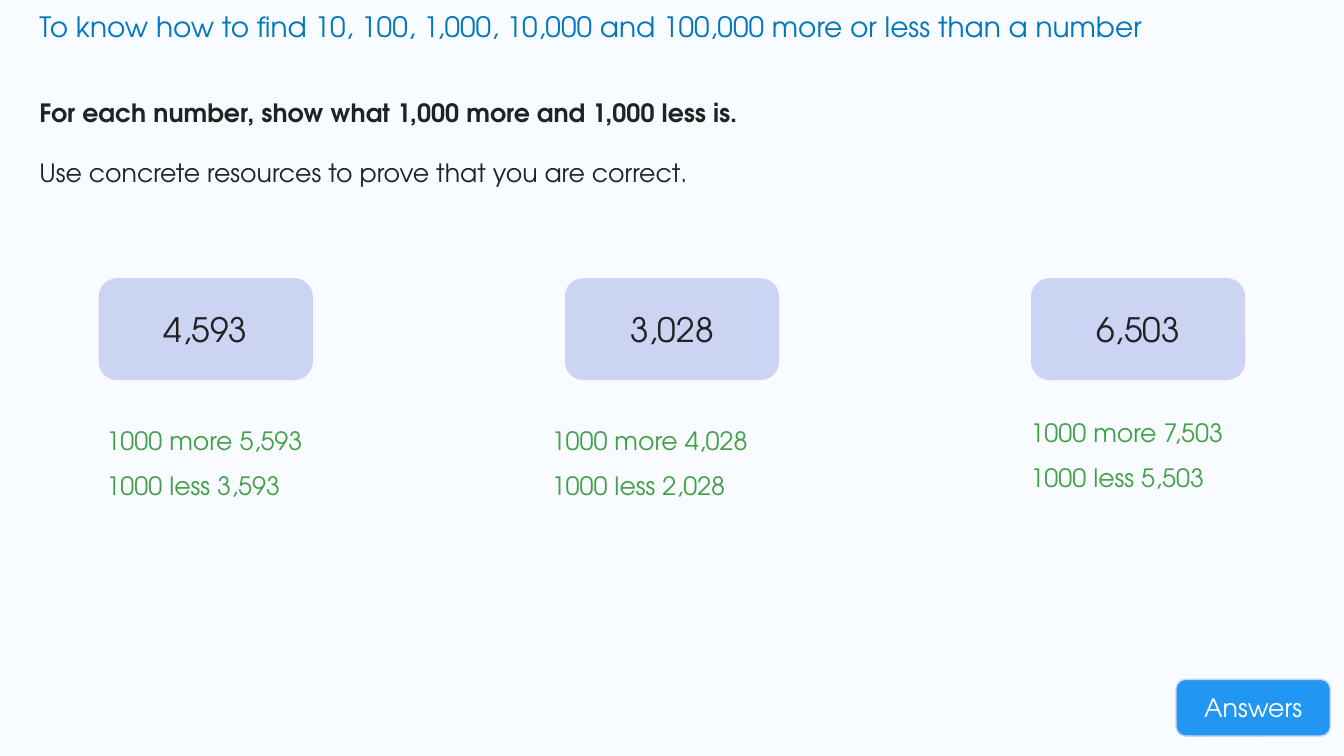
from dataclasses import dataclass

from pptx import Presentation
from pptx.dml.color import RGBColor
from pptx.enum.shapes import MSO_SHAPE
from pptx.enum.text import MSO_ANCHOR, PP_ALIGN
from pptx.util import Pt

EMU_PER_PX = 9525
SLIDE_W, SLIDE_H = 1280, 720


@dataclass(frozen=True)
class Theme:
    font: str = "TeX Gyre Adventor"
    background: str = "F8FBFF"
    heading: str = "0277BD"
    ink: str = "222222"
    card: str = "CCD4F4"
    answer: str = "43A047"
    button: str = "2196F3"
    button_text: str = "FFFFFF"
    heading_size: int = 20
    body_size: int = 18
    number_size: int = 24


THEME = Theme()

CARD_W, CARD_H, CARD_TOP, CARD_STEP = 200, 93, 267, 444
ANSWER_W, ANSWER_H = 248, 83

# number, left and top of its answers
QUESTIONS = [
    (4593, 92, 386),
    (3028, 516, 386),
    (6503, 972, 378),
]


def px(*lengths):
    return [length * EMU_PER_PX for length in lengths]


def paint(fill, color):
    fill.solid()
    fill.fore_color.rgb = RGBColor.from_string(color)


def style(paragraph, size, color, bold=False):
    font = paragraph.font
    font.name = THEME.font
    font.size = Pt(size)
    font.bold = bold
    font.color.rgb = RGBColor.from_string(color)


def add_lines(slide, box, lines, size, color, spacing=1.0):
    """Add a left-aligned text box with one paragraph per line."""
    frame = slide.shapes.add_textbox(*px(*box)).text_frame
    frame.word_wrap = True
    frame.text = "\n".join(lines)
    for paragraph in frame.paragraphs:
        style(paragraph, size, color)
        paragraph.line_spacing = spacing
    return frame.paragraphs


def add_rounded_label(slide, box, text, size, color, fill, line_width):
    label = slide.shapes.add_shape(MSO_SHAPE.ROUNDED_RECTANGLE, *px(*box))
    label.shadow.inherit = False
    paint(label.fill, fill)
    paint(label.line.fill, THEME.card)
    label.line.width = Pt(line_width)
    frame = label.text_frame
    frame.text = text
    frame.vertical_anchor = MSO_ANCHOR.MIDDLE
    paragraph = frame.paragraphs[0]
    paragraph.alignment = PP_ALIGN.CENTER
    style(paragraph, size, color)


def add_instructions(slide):
    task, hint = add_lines(
        slide, (28, 74, 1233, 139),
        ["For each number, show what 1,000 more and 1,000 less is.",
         "Use concrete resources to prove that you are correct."],
        THEME.body_size, THEME.ink, spacing=1.5)
    task.font.bold = True
    hint.space_before = Pt(10)


def add_questions(slide):
    first_left = (SLIDE_W - CARD_W) // 2 - CARD_STEP
    for column, (number, answer_left, answer_top) in enumerate(QUESTIONS):
        card_left = first_left + column * CARD_STEP
        add_rounded_label(slide, (card_left, CARD_TOP, CARD_W, CARD_H), f"{number:,}",
                          THEME.number_size, THEME.ink, THEME.card, line_width=3)
        add_lines(slide, (answer_left, answer_top, ANSWER_W, ANSWER_H),
                  [f"1000 more {number + 1000:,}", f"1000 less {number - 1000:,}"],
                  THEME.body_size, THEME.answer, spacing=1.5)


def main():
    deck = Presentation()
    deck.slide_width, deck.slide_height = px(SLIDE_W, SLIDE_H)
    slide = deck.slides.add_slide(deck.slide_layouts[6])
    paint(slide.background.fill, THEME.background)

    add_lines(slide, (28, 4, 1185, 42),
              ["To know how to find 10, 100, 1,000, 10,000 and 100,000 more or less than a number"],
              THEME.heading_size, THEME.heading)
    add_instructions(slide)
    add_questions(slide)
    add_rounded_label(slide, (1120, 647, 147, 54), "Answers",
                      THEME.body_size, THEME.button_text, THEME.button, line_width=1)

    deck.save("out.pptx")


if __name__ == "__main__":
    main()
